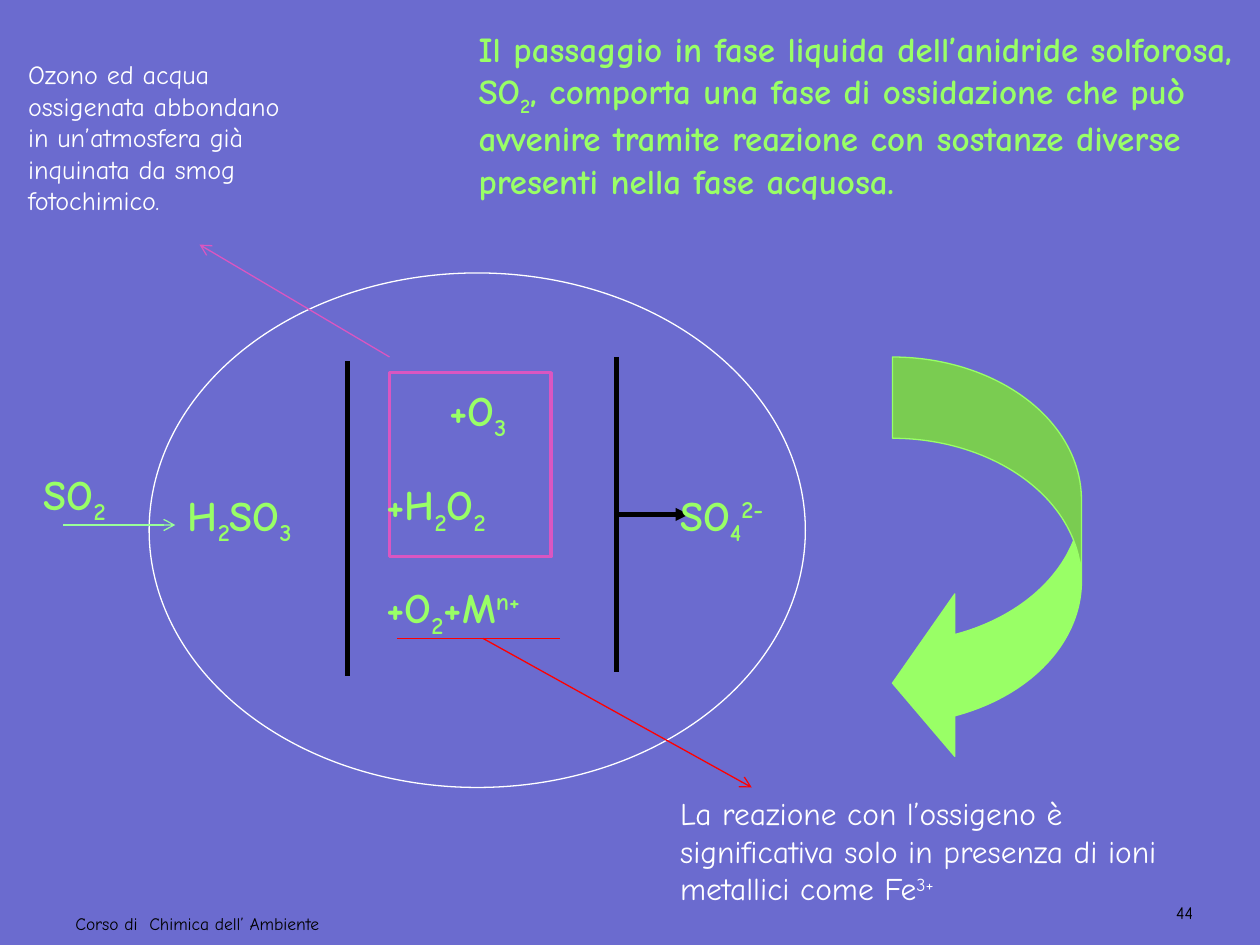
"""Build a slide on the aqueous oxidation of sulphur dioxide."""
from dataclasses import dataclass

from lxml.etree import SubElement
from pptx import Presentation
from pptx.dml.color import RGBColor
from pptx.enum.shapes import MSO_CONNECTOR, MSO_SHAPE
from pptx.enum.text import PP_ALIGN
from pptx.oxml.ns import qn
from pptx.util import Inches, Pt


@dataclass(frozen=True)
class Theme:
    font: str = "Comic Neue"
    background: str = "6B6BCF"
    accent: str = "99FF66"
    inflow: str = "99FF99"
    light: str = "FFFFFF"
    dark: str = "000000"
    oxidants: str = "DA56C1"
    metals: str = "FF0000"
    formula_size: int = 24
    title_size: int = 20
    note_size: int = 18
    aside_size: int = 15
    footer_size: int = 10
    thin: float = 0.75
    frame: float = 2
    reaction: float = 2.5
    bar: float = 3


THEME = Theme()
COLUMNS, ROWS = 120, 90
CELL = Inches(10) / COLUMNS
SUB, SUPER = -25, 30

FORMULAS = [
    ((3, 44, 16, 6), [("SO", 0), ("2", SUB)]),
    ((16.7, 46, 16, 6), [("H", 0), ("2", SUB), ("SO", 0), ("3", SUB)]),
    ((41.6, 36, 15, 6), [("+O", 0), ("3", SUB)]),
    ((35.6, 45, 25, 6), [("+H", 0), ("2", SUB), ("O", 0), ("2", SUB)]),
    ((35.6, 54.8, 25, 6), [("+O", 0), ("2", SUB), ("+M", 0), ("n+", SUPER)]),
    ((63.6, 46, 16, 6), [("SO", 0), ("4", SUB), ("2-", SUPER)]),
]

TITLE = [
    ("Il passaggio in fase liquida dell’anidride solforosa, SO", 0),
    ("2", SUB),
    (", comporta una fase di ossidazione che può avvenire tramite reazione "
     "con sostanze diverse presenti nella fase acquosa.", 0),
]
OXYGEN_NOTE = [
    ("La reazione con l’ossigeno è significativa solo in presenza di ioni "
     "metallici come Fe", 0),
    ("3+", SUPER),
]
OZONE_NOTE = [
    ("Ozono ed acqua ossigenata abbondano in un’atmosfera già inquinata "
     "da smog fotochimico.", 0),
]
COURSE = [("Corso di  Chimica dell’ Ambiente", 0)]
PAGE_NUMBER = [("44", 0)]

TEXTS = [
    ((44.4, 2, 75.6, 21.2), TITLE, THEME.title_size, THEME.accent, True, PP_ALIGN.LEFT),
    ((63.6, 75, 52.8, 12.1), OXYGEN_NOTE, THEME.note_size, THEME.light, False, PP_ALIGN.LEFT),
    ((1.5, 5, 27.1, 19.4), OZONE_NOTE, THEME.aside_size, THEME.light, False, PP_ALIGN.LEFT),
    ((6, 86.4, 37, 4.1), COURSE, THEME.footer_size, THEME.dark, False, PP_ALIGN.LEFT),
    ((110, 85.3, 4.8, 4.1), PAGE_NUMBER, THEME.footer_size, THEME.dark, False, PP_ALIGN.RIGHT),
] + [
    (area, runs, THEME.formula_size, THEME.accent, True, PP_ALIGN.LEFT)
    for area, runs in FORMULAS
]

SHAPES = [
    (MSO_SHAPE.CURVED_LEFT_ARROW, (85, 34, 18, 38.8), THEME.accent, THEME.accent,
     THEME.thin, (0.43, 0.86, 0.33)),
    (MSO_SHAPE.OVAL, (14.2, 26, 62.5, 49), None, THEME.light, THEME.thin, ()),
    (MSO_SHAPE.RECTANGLE, (37.1, 35.5, 15.4, 17.5), None, THEME.oxidants, THEME.frame, ()),
]

LINES = [
    ((33.1, 34.4), (33.1, 64.4), THEME.dark, THEME.bar, None),
    ((58.7, 34), (58.7, 64), THEME.dark, THEME.bar, None),
    ((58.7, 49), (65.6, 49), THEME.dark, THEME.reaction, "triangle"),
    ((6, 50), (16.7, 50), THEME.inflow, THEME.thin, "arrow"),
    ((37.8, 60.8), (53.3, 60.8), THEME.metals, THEME.thin, None),
    ((46, 60.8), (71.6, 75), THEME.metals, THEME.thin, "arrow"),
    ((37.1, 34), (19, 23.3), THEME.oxidants, THEME.thin, "arrow"),
]


def cells(values):
    return [round(value * CELL) for value in values]


def set_line(line, color, width):
    line.color.rgb = RGBColor.from_string(color)
    line.width = Pt(width)


def add_shape(slide, kind, area, fill, color, width, adjustments):
    shape = slide.shapes.add_shape(kind, *cells(area))
    shape.shadow.inherit = False
    for index, value in enumerate(adjustments):
        shape.adjustments[index] = value
    if fill:
        shape.fill.solid()
        shape.fill.fore_color.rgb = RGBColor.from_string(fill)
    else:
        shape.fill.background()
    set_line(shape.line, color, width)


def add_line(slide, start, end, color, width, arrowhead):
    connector = slide.shapes.add_connector(
        MSO_CONNECTOR.STRAIGHT, *cells(start + end))
    set_line(connector.line, color, width)
    properties = connector._element.spPr
    if arrowhead:
        SubElement(properties.find(qn("a:ln")), qn("a:tailEnd"), type=arrowhead)
    SubElement(properties, qn("a:effectLst"))


def add_text(slide, area, runs, size, color, bold, alignment):
    frame = slide.shapes.add_textbox(*cells(area)).text_frame
    frame.word_wrap = True
    paragraph = frame.paragraphs[0]
    paragraph.alignment = alignment
    paragraph.font.name = THEME.font
    paragraph.font.size = Pt(size)
    paragraph.font.bold = bold
    paragraph.font.color.rgb = RGBColor.from_string(color)
    for text, baseline in runs:
        run = paragraph.add_run()
        run.text = text
        if baseline:
            run._r.get_or_add_rPr().set("baseline", str(baseline * 1000))


def main():
    presentation = Presentation()
    presentation.slide_width = round(COLUMNS * CELL)
    presentation.slide_height = round(ROWS * CELL)
    slide = presentation.slides.add_slide(presentation.slide_layouts[6])
    slide.background.fill.solid()
    slide.background.fill.fore_color.rgb = RGBColor.from_string(THEME.background)
    for shape in SHAPES:
        add_shape(slide, *shape)
    for line in LINES:
        add_line(slide, *line)
    for text in TEXTS:
        add_text(slide, *text)
    presentation.save("out.pptx")


if __name__ == "__main__":
    main()
